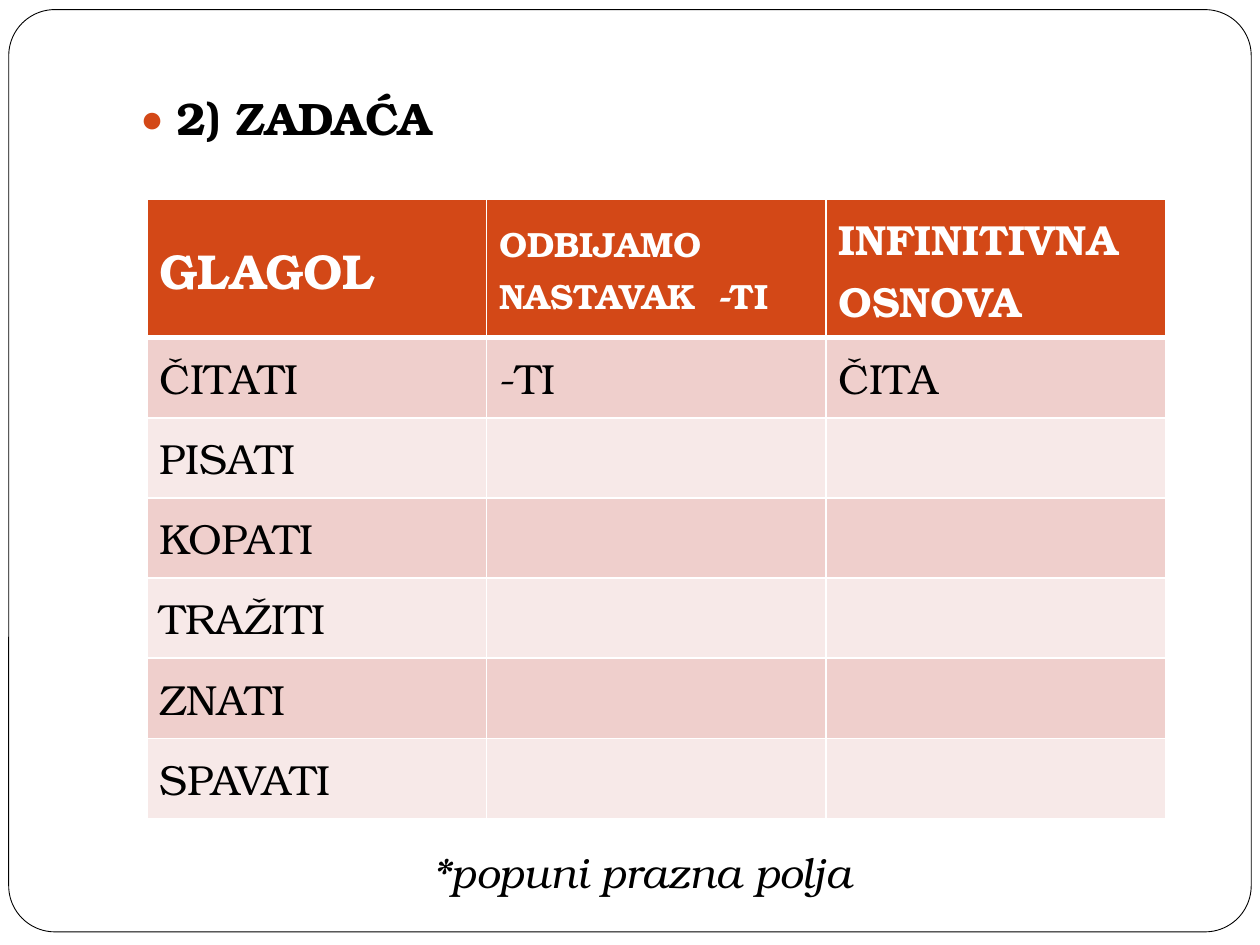
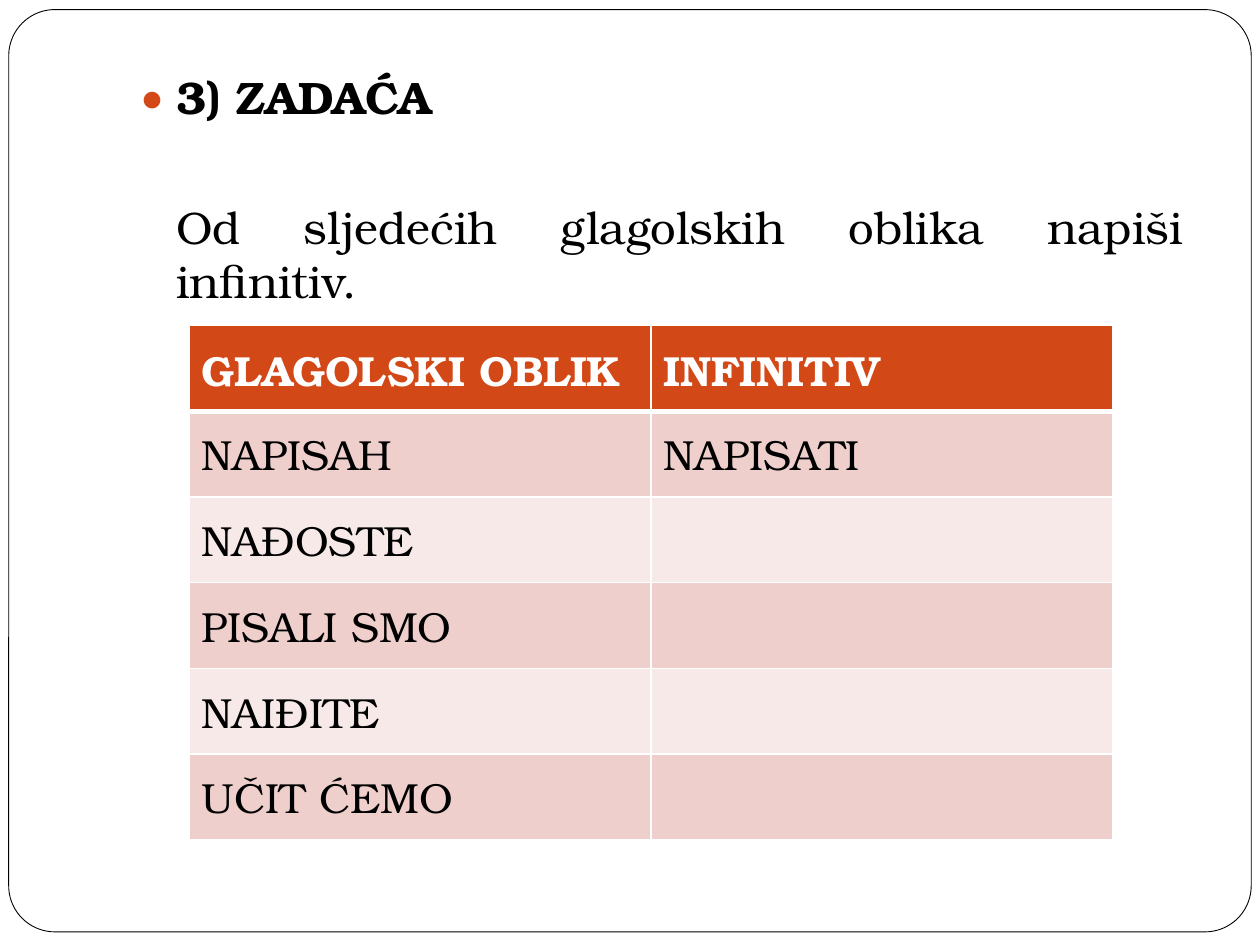
import lxml.etree
import pptx
import pptx.dml.color
import pptx.enum.shapes
import pptx.enum.text
import pptx.oxml.ns
import pptx.util

Pt = pptx.util.Pt
Align = pptx.enum.text.PP_ALIGN
qn = pptx.oxml.ns.qn

FONT = "TeX Gyre Bonum"
COLOURS = {
    "paper": "FFFFFF",
    "ink": "000000",
    "accent": "D34817",
    "band_dark": "EFCFCC",
    "band_light": "F7E9E8",
}
BODY_SIZE = 26
CELL_SIZE = 24
BODY_INDENT = 21.6
BODY_SPACE = 5.8


def rgb(name):
    return pptx.dml.color.RGBColor.from_string(COLOURS[name])


def add_child(parent, tag, **attributes):
    return lxml.etree.SubElement(parent, qn(tag), attributes)


class Worksheet:
    """Holds the presentation, its style and the slide being built."""

    def __init__(self):
        self.presentation = pptx.Presentation()
        self.presentation.slide_width = Pt(720)
        self.presentation.slide_height = Pt(540)
        self.slide = None

    def new_slide(self):
        layout = self.presentation.slide_layouts[6]
        self.slide = self.presentation.slides.add_slide(layout)
        self.frame()

    def frame(self):
        shape = self.slide.shapes.add_shape(
            pptx.enum.shapes.MSO_SHAPE.ROUNDED_RECTANGLE,
            Pt(5), Pt(5.5), Pt(710), Pt(527))
        shape.adjustments[0] = 0.05
        shape.shadow.inherit = False
        shape.fill.solid()
        shape.fill.fore_color.rgb = rgb("paper")
        shape.line.color.rgb = rgb("ink")
        shape.line.width = Pt(0.5)

    def text_box(self, left, top, width, height):
        text_frame = self.slide.shapes.add_textbox(
            Pt(left), Pt(top), Pt(width), Pt(height)).text_frame
        text_frame.word_wrap = True
        return text_frame

    def run(self, paragraph, text, size, colour="ink", bold=False, italic=False):
        run = paragraph.add_run()
        run.text = text
        run.font.name = FONT
        run.font.size = Pt(size)
        run.font.color.rgb = rgb(colour)
        run.font.bold = bold
        run.font.italic = italic

    def bullet(self, paragraph, character, colour=None, percent=100, hanging=0):
        properties = paragraph._p.get_or_add_pPr()
        properties.set("marL", str(Pt(hanging)))
        properties.set("indent", str(-Pt(hanging)))
        if colour:
            add_child(add_child(properties, "a:buClr"), "a:srgbClr", val=COLOURS[colour])
        add_child(properties, "a:buSzPct", val=str(percent * 1000))
        add_child(properties, "a:buFont", typeface=FONT)
        add_child(properties, "a:buChar", char=character)

    def task(self, top, heading, instruction=None):
        """Bulleted heading, with an indented instruction one line below it."""
        text_frame = self.text_box(72, top, 612, 110)
        paragraph = text_frame.paragraphs[0]
        paragraph.alignment = Align.JUSTIFY
        paragraph.space_before = Pt(BODY_SPACE)
        self.bullet(paragraph, "●", "accent", 85, BODY_INDENT)
        self.run(paragraph, heading, BODY_SIZE, bold=True)
        if instruction:
            paragraph = text_frame.add_paragraph()
            paragraph.alignment = Align.JUSTIFY
            paragraph.space_before = Pt(2 * BODY_SPACE + 1.2 * BODY_SIZE)
            paragraph._p.get_or_add_pPr().set("marL", str(Pt(BODY_INDENT)))
            self.run(paragraph, instruction, BODY_SIZE)

    def note(self, left, top, text):
        text_frame = self.text_box(left, top, 384, 36)
        self.run(text_frame.paragraphs[0], text, CELL_SIZE, italic=True)

    def borders(self, cell, row):
        properties = cell._tc.get_or_add_tcPr()
        widths = {"L": 1, "R": 1, "T": 3 if row == 1 else 1, "B": 3 if row == 0 else 1}
        for side, width in widths.items():
            line = add_child(properties, "a:ln" + side, w=str(Pt(width)))
            add_child(add_child(line, "a:solidFill"), "a:srgbClr", val=COLOURS["paper"])

    def cell(self, cell, row, text, size, alignment):
        self.borders(cell, row)
        band = "band_dark" if row % 2 else "band_light"
        cell.fill.solid()
        cell.fill.fore_color.rgb = rgb("accent" if row == 0 else band)
        cell.vertical_anchor = pptx.enum.text.MSO_ANCHOR.MIDDLE
        if not text:
            return
        paragraph = cell.text_frame.paragraphs[0]
        paragraph.alignment = alignment
        if text.startswith("-"):
            self.bullet(paragraph, "-")
            text = text[1:]
        self.run(paragraph, text, size, "paper" if row == 0 else "ink", bold=row == 0)

    def exercise_table(self, left, top, width, header_height, row_height, header,
                       example, verbs, header_sizes=None, header_alignment=Align.LEFT):
        """Header, one solved example, then verbs with cells left to fill in."""
        count = len(header)
        blanks = [""] * (count - 1)
        rows = [header, example] + [[verb] + blanks for verb in verbs]
        height = header_height + row_height * (len(rows) - 1)
        table = self.slide.shapes.add_table(
            len(rows), count, Pt(left), Pt(top), Pt(width), Pt(height)).table
        for column in table.columns:
            column.width = Pt(width / count)
        for row, texts in enumerate(rows):
            table.rows[row].height = Pt(row_height if row else header_height)
            sizes = header_sizes if row == 0 and header_sizes else [CELL_SIZE] * count
            alignment = Align.LEFT if row else header_alignment
            for column, (text, size) in enumerate(zip(texts, sizes)):
                self.cell(table.cell(row, column), row, text, size, alignment)


def main():
    sheet = Worksheet()

    sheet.new_slide()
    sheet.task(48, "2) ZADAĆA")
    sheet.exercise_table(
        84, 114, 582, 79, 45.8,
        header=["GLAGOL", "ODBIJAMO NASTAVAK  -TI", "INFINITIVNA OSNOVA"],
        example=["ČITATI", "-TI", "ČITA"],
        verbs=["PISATI", "KOPATI", "TRAŽITI", "ZNATI", "SPAVATI"],
        header_sizes=[28, 20, 24], header_alignment=Align.JUSTIFY)
    sheet.note(240, 480, "*popuni prazna polja")

    sheet.new_slide()
    sheet.task(36, "3) ZADAĆA", "Od sljedećih glagolskih oblika napiši infinitiv.")
    sheet.exercise_table(
        108, 186, 528, 49, 49,
        header=["GLAGOLSKI OBLIK", "INFINITIV"],
        example=["NAPISAH", "NAPISATI"],
        verbs=["NAĐOSTE", "PISALI SMO", "NAIĐITE", "UČIT ĆEMO"])

    sheet.presentation.save("out.pptx")


if __name__ == "__main__":
    main()
